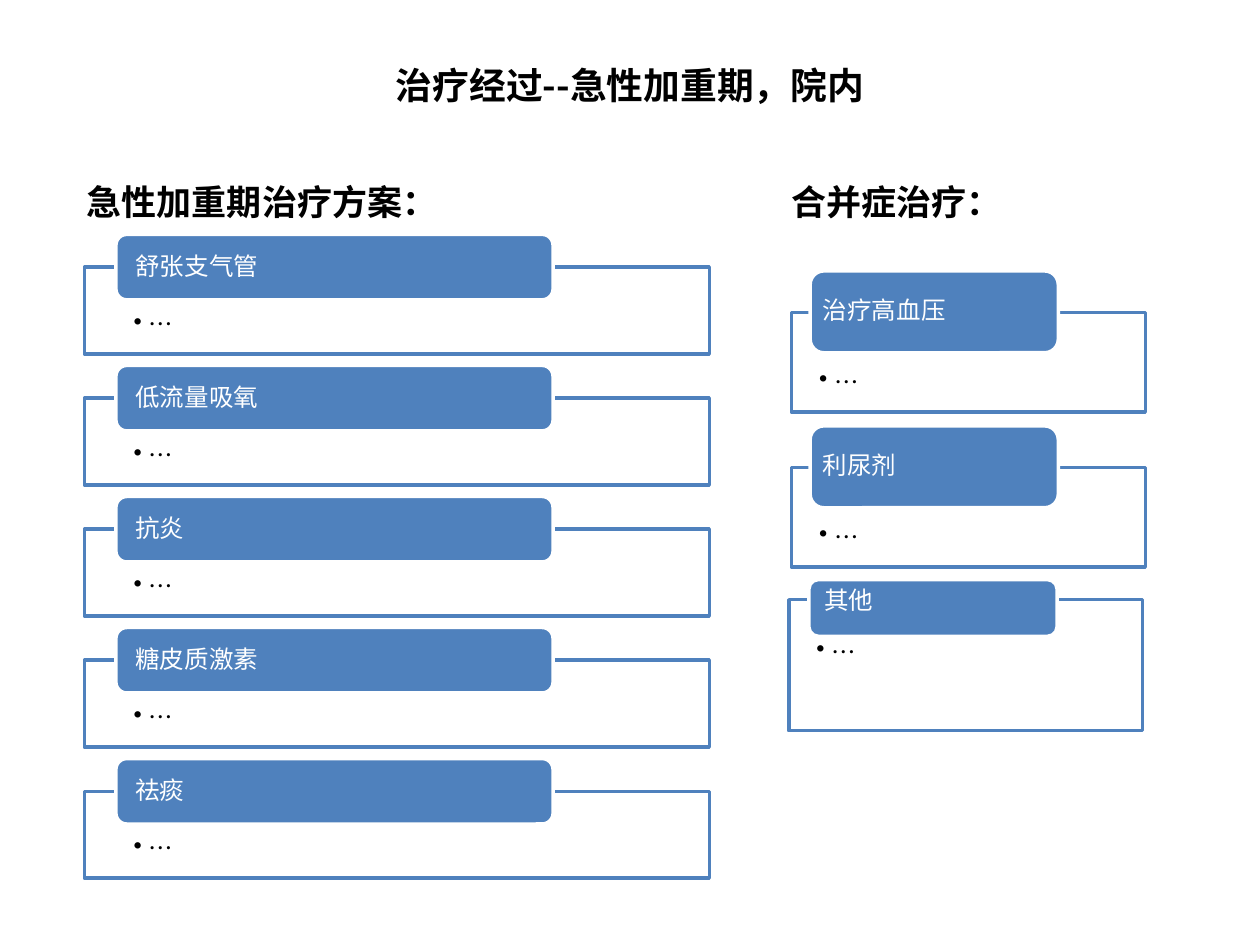
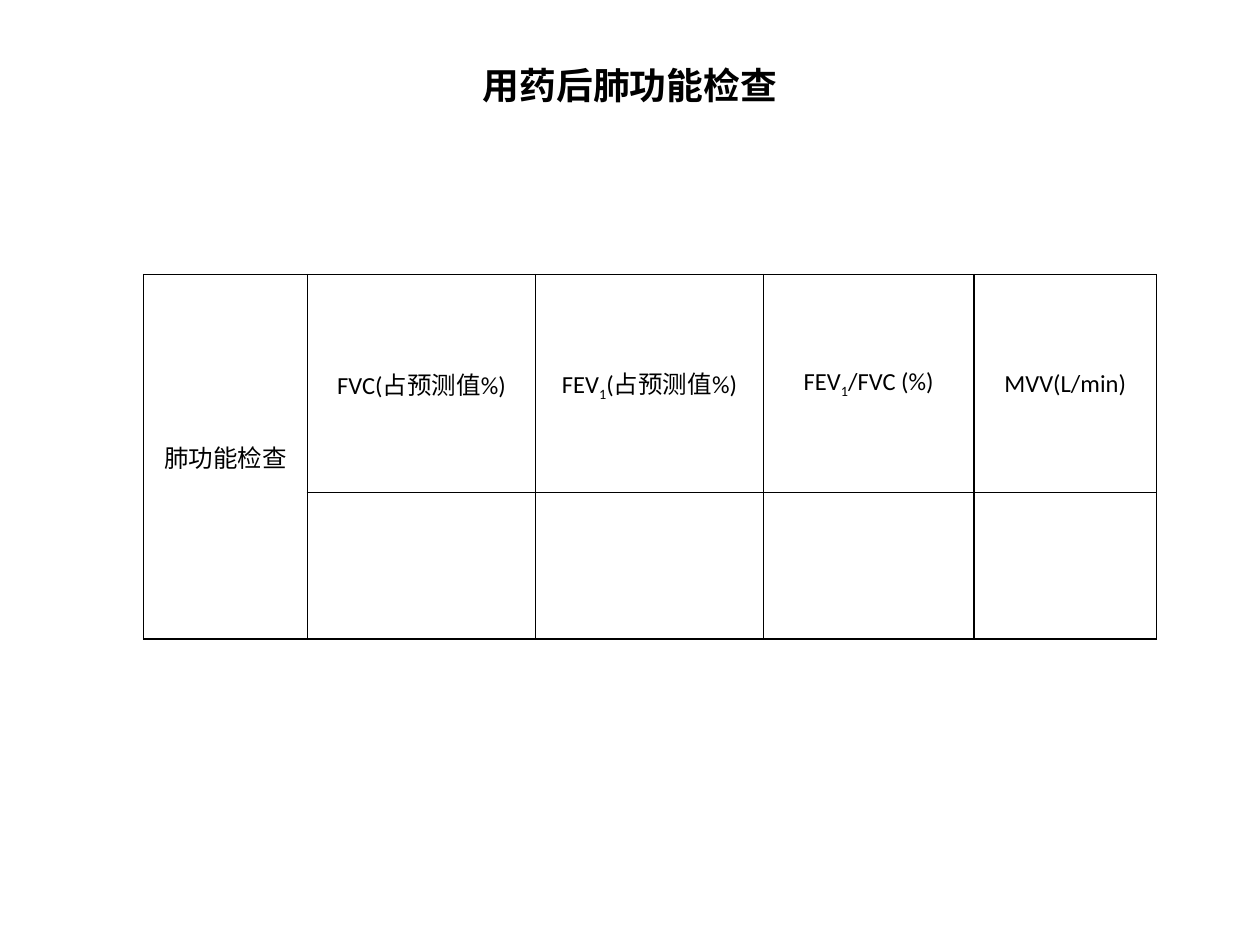
"""Build two slides on acute-phase treatment and lung function results."""
from lxml.etree import SubElement
from pptx import Presentation
from pptx.dml.color import RGBColor
from pptx.enum.shapes import MSO_SHAPE as Shape
from pptx.enum.text import MSO_ANCHOR as Anchor, MSO_AUTO_SIZE as AutoSize, PP_ALIGN as Align
from pptx.oxml.ns import qn
from pptx.util import Inches, Pt

COLORS = {"ink": "000000", "paper": "FFFFFF", "accent": "4F81BD"}
CJK = "Noto Sans CJK SC"
TITLE = {"size": Pt(21), "bold": True, "name": CJK}
HEADING = {"size": Pt(20), "bold": True, "name": CJK}
BODY = {"size": Pt(14), "name": CJK}
TABLE = {"size": Pt(14), "name": "Calibri"}


def write(paragraph, text, style, color="ink"):
    run = paragraph.add_run()
    run.text = text
    for attribute, value in style.items():
        setattr(run.font, attribute, value)
    run.font.color.rgb = RGBColor.from_string(COLORS[color])
    SubElement(run._r.rPr, qn("a:ea"), typeface=CJK)
    return run


def panel(slide, kind, box, fill, line, insets, anchor):
    shape = slide.shapes.add_shape(kind, *map(Inches, box))
    shape.shadow.inherit = False
    shape.fill.solid()
    shape.fill.fore_color.rgb = RGBColor.from_string(COLORS[fill])
    shape.line.color.rgb = RGBColor.from_string(COLORS[line])
    shape.line.width = Pt(2)
    frame = shape.text_frame
    frame.word_wrap = True
    frame.vertical_anchor = anchor
    for side, inset in zip(("left", "top", "right", "bottom"), insets):
        setattr(frame, f"margin_{side}", Inches(inset))
    paragraph = frame.paragraphs[0]
    paragraph.alignment = Align.LEFT
    paragraph.line_spacing = 0.9
    return shape, paragraph


prs = Presentation()
prs.slide_width, prs.slide_height = Inches(10), Inches(7.5)

slides = []
for title_text in ("治疗经过--急性加重期，院内", "用药后肺功能检查"):
    slide = prs.slides.add_slide(prs.slide_layouts[5])
    title = slide.shapes.title
    title.left, title.top, title.width, title.height = map(Inches, (0.5, 0.05, 9, 1.25))
    title.text_frame.vertical_anchor = Anchor.MIDDLE
    title.text_frame.paragraphs[0].alignment = Align.CENTER
    write(title.text_frame.paragraphs[0], title_text, TITLE)
    slides.append(slide)
treatment, lung_function = slides

for text, left, width in (("急性加重期治疗方案：", 0.59, 3.01), ("合并症治疗：", 6.18, 1.89)):
    heading = treatment.shapes.add_textbox(*map(Inches, (left, 1.15, width, 0.6))).text_frame
    heading.word_wrap = False
    heading.auto_size = AutoSize.SHAPE_TO_FIT_TEXT
    heading.paragraphs[0].line_spacing = 1.7
    write(heading.paragraphs[0], text, HEADING)

card_groups = [
    {"names": ["舒张支气管", "低流量吸氧", "抗炎", "糖皮质激素", "祛痰"],
     "box": (0.67, 2.12, 4.96, 0.69), "pitch": 1.04, "label": (0.25, -0.26, 3.47, 0.52),
     "box_insets": (0.39, 0.36, 0.39, 0.11), "label_insets": (0.13, 0, 0.13, 0),
     "anchor": Anchor.MIDDLE},
    {"names": ["治疗高血压", "利尿剂"],
     "box": (6.28, 2.48, 2.81, 0.79), "pitch": 1.23, "label": (0.15, -0.33, 1.97, 0.65),
     "box_insets": (0.22, 0.46, 0.22, 0.11), "label_insets": (0.07, 0, 0.07, 0),
     "anchor": Anchor.MIDDLE},
    {"names": ["其他"],
     "box": (6.26, 4.76, 2.81, 1.04), "pitch": 0, "label": (0.16, -0.16, 1.97, 0.45),
     "box_insets": (0.22, 0.32, 0.22, 0.11), "label_insets": (0.1, 0.05, 0.1, 0.05),
     "anchor": Anchor.TOP},
]
for group in card_groups:
    left, first_top, width, height = group["box"]
    dx, dy, label_width, label_height = group["label"]
    for index, name in enumerate(group["names"]):
        top = first_top + index * group["pitch"]
        detail, bullet = panel(treatment, Shape.RECTANGLE, (left, top, width, height),
                               "paper", "accent", group["box_insets"], Anchor.TOP)
        fill_color = detail._element.spPr.find(qn("a:solidFill"))[0]
        SubElement(fill_color, qn("a:alpha"), val="90000")
        properties = bullet._p.get_or_add_pPr()
        properties.set("marL", str(Inches(0.12)))
        properties.set("indent", str(-Inches(0.12)))
        SubElement(properties, qn("a:buChar"), char="•")
        write(bullet, "…", BODY)
        _, label = panel(treatment, Shape.ROUNDED_RECTANGLE,
                         (left + dx, top + dy, label_width, label_height),
                         "accent", "paper", group["label_insets"], group["anchor"])
        write(label, name, BODY, "paper")

column_widths = (1.3, 1.81, 1.81, 1.67, 1.45)
row_heights = (1.73, 1.16)
results = lung_function.shapes.add_table(
    2, 5, *map(Inches, (1.14, 2.18, sum(column_widths), sum(row_heights)))).table
results.first_row = results.horz_banding = False
for column, width in zip(results.columns, column_widths):
    column.width = Inches(width)
for row, height in zip(results.rows, row_heights):
    row.height = Inches(height)
results.cell(0, 0).merge(results.cell(1, 0))

for cell in results.iter_cells():
    cell.vertical_anchor = Anchor.MIDDLE
    cell.margin_left = cell.margin_right = Inches(0.05)
    cell.margin_top = cell.margin_bottom = Inches(0.03)
    properties = cell._tc.get_or_add_tcPr()
    for side in ("lnL", "lnR", "lnT", "lnB"):
        border = SubElement(properties, qn(f"a:{side}"), w=str(Pt(1)))
        SubElement(SubElement(border, qn("a:solidFill")), qn("a:srgbClr"), val=COLORS["ink"])
    cell.fill.background()

measures = [["肺功能检查"], ["FVC(占预测值%)"], ["FEV", "1", "(占预测值%)"],
            ["FEV", "1", "/FVC (%)"], ["MVV(L/min)"]]
for column, pieces in enumerate(measures):
    paragraph = results.cell(0, column).text_frame.paragraphs[0]
    paragraph.alignment = Align.CENTER
    for piece in pieces:
        run = write(paragraph, piece, TABLE)
        if piece == "1":
            run._r.rPr.set("baseline", "-25000")

prs.save("out.pptx")
